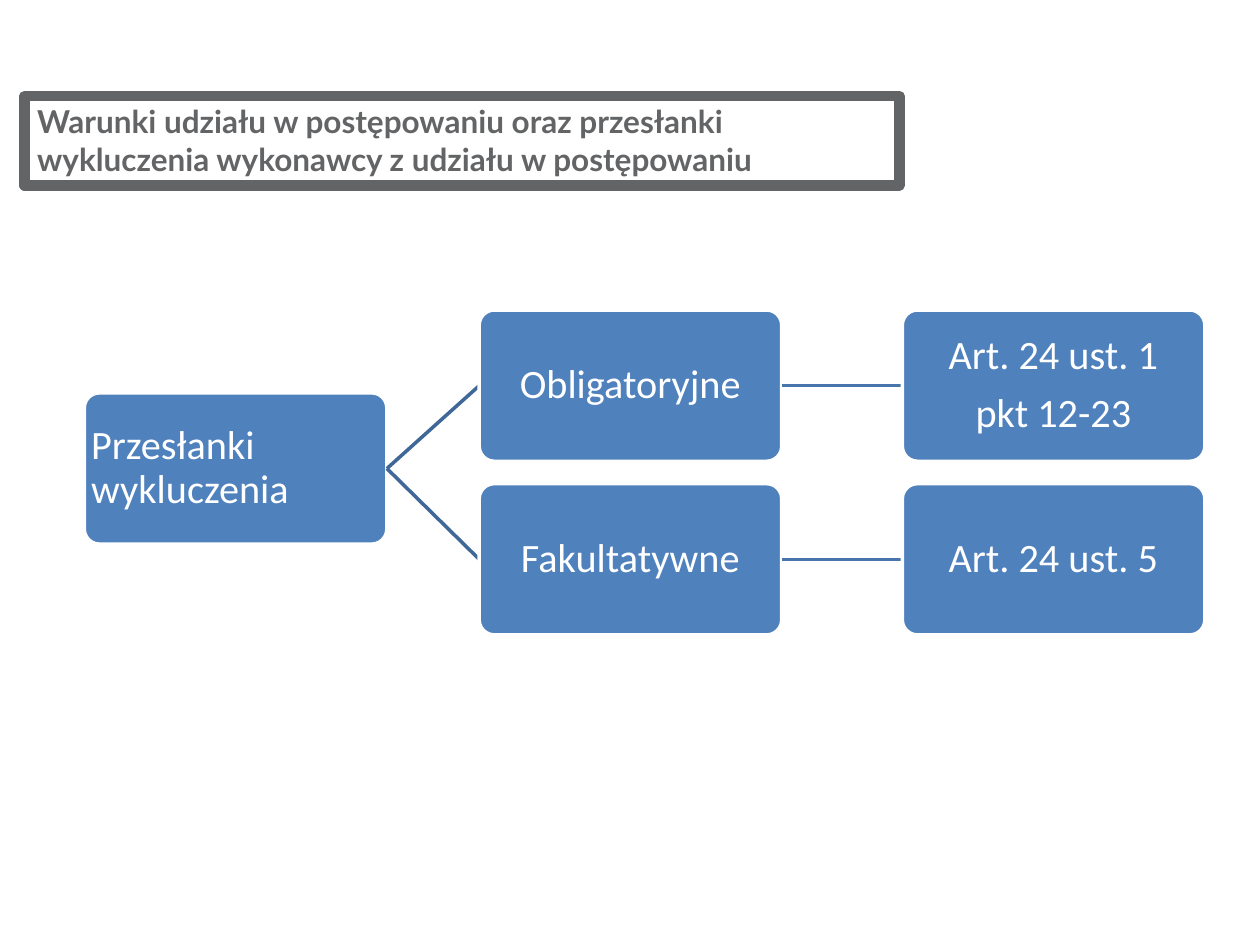
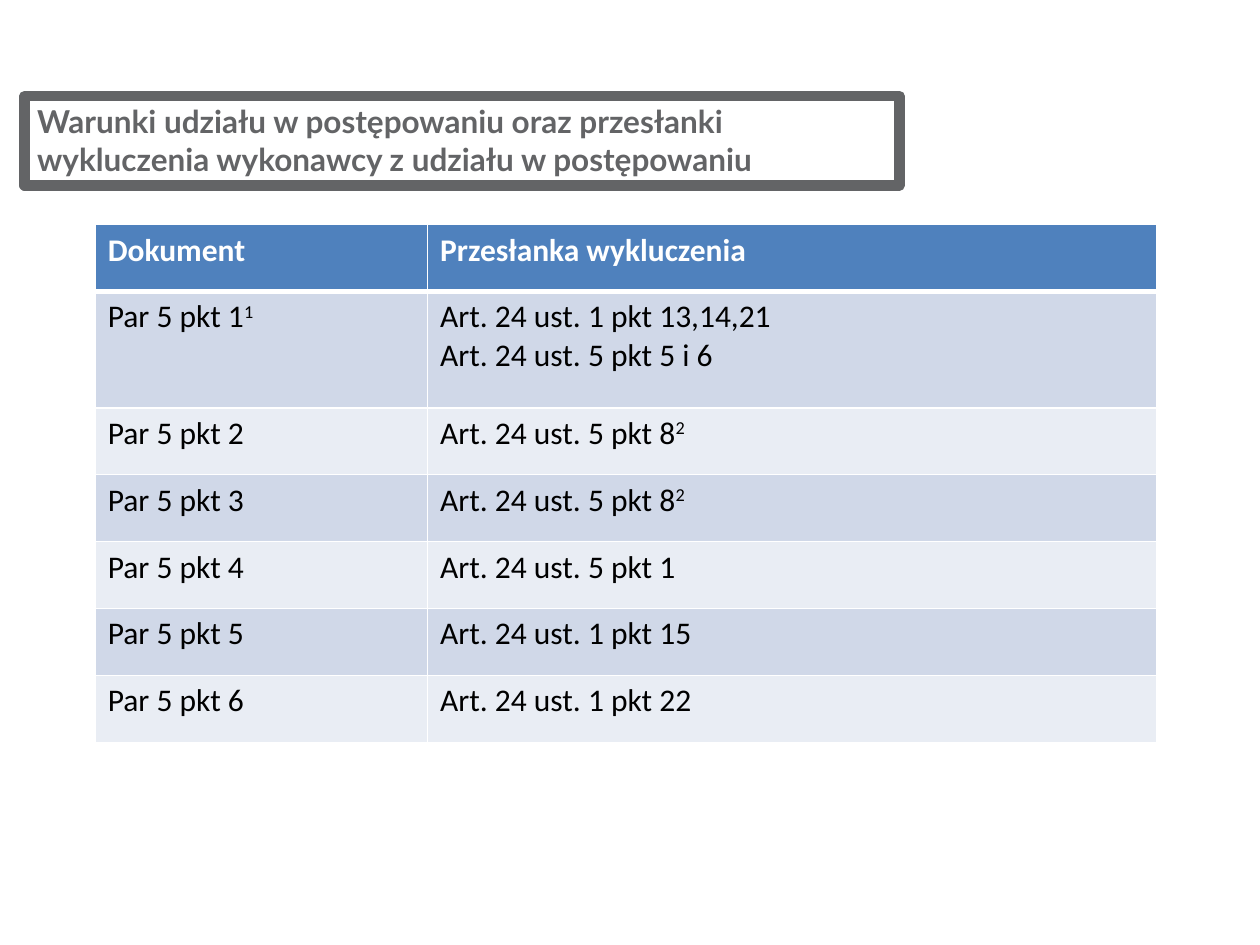
from lxml.etree import SubElement as Sub
from pptx import Presentation as Deck
from pptx.dml.color import RGBColor as Rgb
from pptx.enum.shapes import MSO_CONNECTOR as Link, MSO_SHAPE as Form
from pptx.enum.text import MSO_ANCHOR as Anchor, PP_ALIGN as Align
from pptx.oxml.ns import qn
from pptx.util import Cm, Pt

TITLE = ("Warunki udziału w postępowaniu oraz przesłanki "
         "wykluczenia wykonawcy z udziału w postępowaniu")
ROWS = [
    ("Dokument", "Przesłanka wykluczenia"),
    ("Par 5 pkt 1^1", "Art. 24 ust. 1 pkt 13,14,21\nArt. 24 ust. 5 pkt 5 i 6"),
    ("Par 5 pkt 2", "Art. 24 ust. 5 pkt 8^2"),
    ("Par 5 pkt 3", "Art. 24 ust. 5 pkt 8^2"),
    ("Par 5 pkt 4", "Art. 24 ust. 5 pkt 1"),
    ("Par 5 pkt 5", "Art. 24 ust. 1 pkt 15"),
    ("Par 5 pkt 6", "Art. 24 ust. 1 pkt 22"),
]


def tint(code):
    return Rgb.from_string(code)


class Pen:
    """Holds the deck style and draws on the current slide."""

    gray, blue, white, black = "636466", "4F81BD", "FFFFFF", "000000"
    bands = ("E9EDF4", "D0D8E8")
    wide, high = 6.1, 3.05

    def __init__(self):
        self.deck = Deck()
        self.deck.slide_width, self.deck.slide_height = Cm(25.4), Cm(19.05)

    def page(self):
        self.slide = self.deck.slides.add_slide(self.deck.slide_layouts[6])
        self.title()

    def label(self, frame, text, size, color, font="Calibri", bold=False,
              align=Align.LEFT, lead=None, after=None):
        frame.word_wrap = True
        for n, row in enumerate(text.split("\n")):
            para = frame.add_paragraph() if n else frame.paragraphs[0]
            para.alignment, para.line_spacing = align, lead
            para.space_after = after
            for k, part in enumerate(row.split("^")):
                run = para.add_run()
                run.text = part
                run.font.size, run.font.name = Pt(size), font
                run.font.bold = bold
                run.font.color.rgb = tint(color)
                if k:
                    run._r.get_or_add_rPr().set("baseline", "30000")

    def shape(self, form, x, y, wide, high, line, width):
        box = self.slide.shapes.add_shape(form, Cm(x), Cm(y), Cm(wide), Cm(high))
        box.shadow.inherit = False
        box.line.color.rgb, box.line.width = tint(line), Pt(width)
        return box

    def title(self):
        box = self.shape(Form.RECTANGLE, 0.5, 1.94, 17.63, 1.8, self.gray, 6)
        box.fill.background()
        box.text_frame.vertical_anchor = Anchor.TOP
        self.label(box.text_frame, TITLE, 18, self.gray, "Lato", True)

    def node(self, text, x, y, root=None, line=None, align=Align.CENTER):
        if root:
            link = self.slide.shapes.add_connector(Link.STRAIGHT, 0, 0, 0, 0)
            Sub(link._element.spPr, qn("a:effectLst"))
            link.line.color.rgb, link.line.width = tint(line), Pt(2)
            link.begin_connect(root, 3)
        box = self.shape(Form.ROUNDED_RECTANGLE, x, y, self.wide, self.high,
                         self.white, 2)
        box.adjustments[0] = 0.1
        box.fill.solid()
        box.fill.fore_color.rgb = tint(self.blue)
        frame = box.text_frame
        frame.margin_left = frame.margin_right = Cm(0.05)
        frame.margin_top = frame.margin_bottom = Cm(0.05)
        frame.vertical_anchor = Anchor.MIDDLE
        self.label(frame, text, 23, self.white, align=align, lead=0.9, after=Pt(8))
        if root:
            link.end_connect(box, 1)
        return box

    def edge(self, cell, side, width):
        props = cell._tc.get_or_add_tcPr()
        line = Sub(props, qn(f"a:ln{side}"), w=str(Pt(width)))
        fill = Sub(line, qn("a:solidFill"))
        Sub(fill, qn("a:srgbClr"), val=self.white)

    def table(self, rows, x, y, cols, highs):
        grid = self.slide.shapes.add_table(
            len(rows), len(cols), Cm(x), Cm(y), Cm(sum(cols)), Cm(sum(highs))).table
        grid.horz_banding = False
        for col, wide in zip(grid.columns, cols):
            col.width = Cm(wide)
        for n, (row, high) in enumerate(zip(rows, highs)):
            grid.rows[n].height = Cm(high)
            for k, text in enumerate(row):
                cell = grid.cell(n, k)
                for side in "LRTB":
                    thick = (side, n) in (("B", 0), ("T", 1))
                    self.edge(cell, side, 3 if thick else 1)
                cell.fill.solid()
                cell.fill.fore_color.rgb = tint(self.bands[n % 2] if n else self.blue)
                self.label(cell.text_frame, text, 18,
                           self.black if n else self.white, bold=not n)


def main():
    pen = Pen()
    pen.page()
    root = pen.node("Przesłanki wykluczenia", 1.7, 7.92, align=Align.LEFT)
    kinds = [("Obligatoryjne", "Art. 24 ust. 1\npkt 12-23"),
             ("Fakultatywne", "Art. 24 ust. 5")]
    for n, (kind, rule) in enumerate(kinds):
        y = 6.25 + n * 3.5
        mid = pen.node(kind, 9.66, y, root, "3F6797")
        pen.node(rule, 18.19, y, mid, "4875AC")

    pen.page()
    pen.table(ROWS, 1.92, 4.53, (6.7, 14.7), (1.35, 2.34) + (1.35,) * 5)
    pen.deck.save("out.pptx")


if __name__ == "__main__":
    main()
